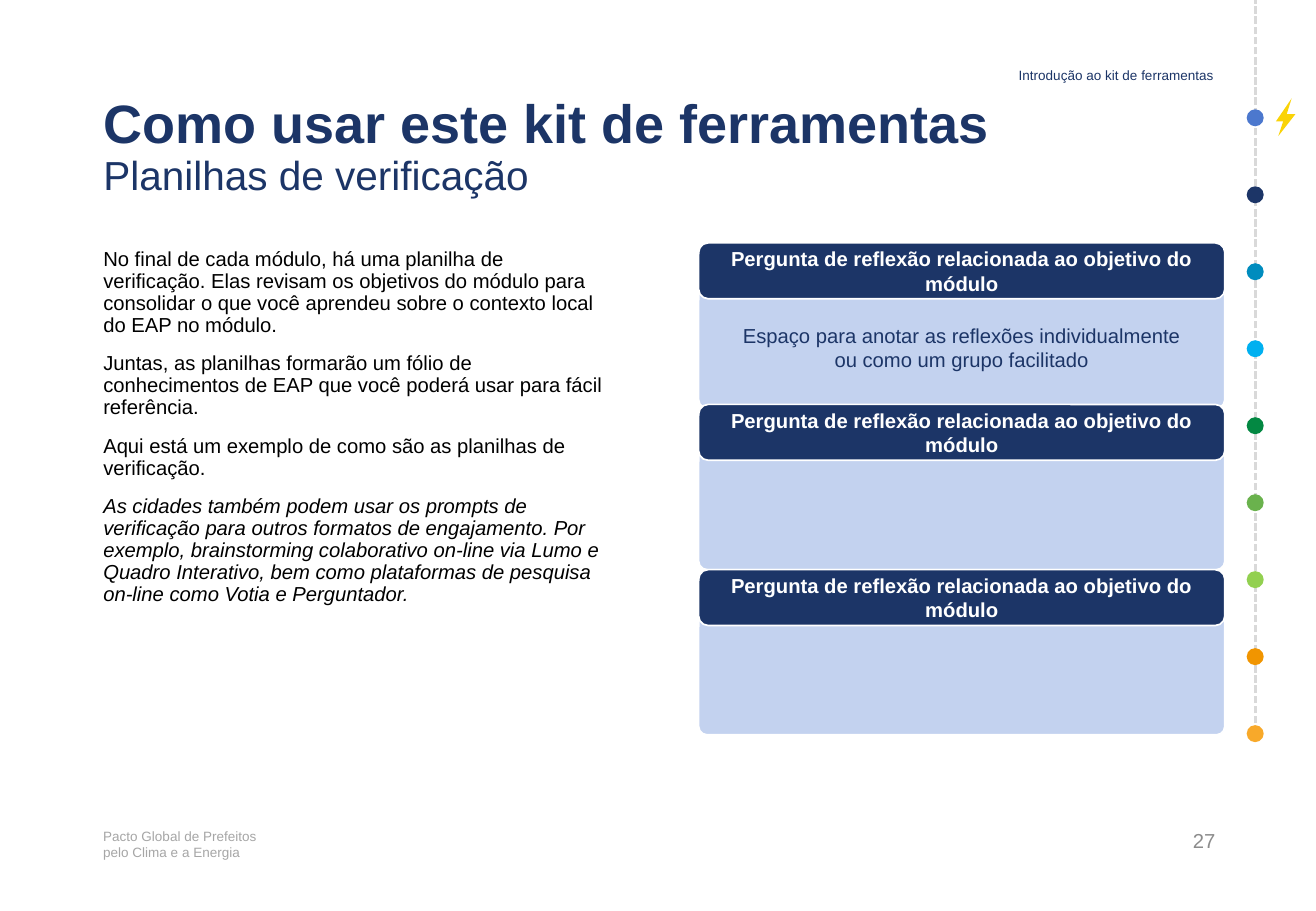
from lxml.etree import SubElement
from pptx import Presentation
from pptx.dml.color import RGBColor
from pptx.enum.dml import MSO_LINE
from pptx.enum.shapes import MSO_CONNECTOR, MSO_SHAPE
from pptx.enum.text import MSO_ANCHOR as ANCHOR, MSO_AUTO_SIZE, PP_ALIGN as ALIGN
from pptx.oxml.ns import qn
from pptx.util import Inches, Pt

NAVY = RGBColor(0x1C, 0x35, 0x67)
PALE_BLUE = RGBColor(0xC3, 0xD2, 0xEF)
WHITE = RGBColor(0xFF, 0xFF, 0xFF)
BLACK = RGBColor(0x00, 0x00, 0x00)
FOOTER_GREY = RGBColor(0xA6, 0xA6, 0xA6)
NUMBER_GREY = RGBColor(0x8C, 0x8C, 0x8C)
LINE_GREY = RGBColor(0xD9, 0xD9, 0xD9)
YELLOW = RGBColor(0xFA, 0xD3, 0x07)
BLUE = RGBColor(0x4C, 0x78, 0xCE)
TEAL = RGBColor(0x00, 0x8C, 0xBE)
SKY = RGBColor(0x00, 0xB0, 0xF0)
GREEN = RGBColor(0x03, 0x88, 0x42)
LEAF = RGBColor(0x6A, 0xB2, 0x4D)
LIME = RGBColor(0x92, 0xD0, 0x50)
ORANGE = RGBColor(0xF1, 0x95, 0x00)
AMBER = RGBColor(0xF8, 0xA9, 0x2A)
MODULE_COLORS = [BLUE, NAVY, TEAL, SKY, GREEN, LEAF, LIME, ORANGE, AMBER]

QUESTION = "Pergunta de reflexão relacionada ao objetivo do módulo"
CARDS = [
    (2, "Espaço para anotar as reflexões individualmente\nou como um grupo facilitado"),
    (3.33, ""),
    (4.69, ""),
]
BODY = [
    "No final de cada módulo, há uma planilha de verificação. Elas revisam os objetivos "
    "do módulo para consolidar o que você aprendeu sobre o contexto local do EAP no módulo.",
    "Juntas, as planilhas formarão um fólio de conhecimentos de EAP que você poderá usar "
    "para fácil referência.",
    "Aqui está um exemplo de como são as planilhas de verificação.",
]
BODY_NOTE = (
    "As cidades também podem usar os prompts de verificação para outros formatos de "
    "engajamento. Por exemplo, brainstorming colaborativo on-line via Lumo e Quadro "
    "Interativo, bem como plataformas de pesquisa on-line como Votia e Perguntador."
)
BOLT_PARTS = [
    [(0.07, 0.19), (0, 0.19), (0.13, 0), (0.08, 0.16)],
    [(0.08, 0.13), (0.16, 0.13), (0.02, 0.31), (0.07, 0.16)],
]


def write(p, text, size=12, color=BLACK, bold=False, italic=False):
    """Add text to a paragraph, with a line break at each newline."""
    for i, line in enumerate(text.split("\n")):
        if i:
            p.add_line_break()
        r = p.add_run()
        r.text = line
        r.font.name = "Arial"
        r.font.size = Pt(size)
        r.font.color.rgb = color
        r.font.bold = bold
        r.font.italic = italic


def place(sp, left, top, width, height):
    """Move a shape to a box given in inches."""
    sp.left, sp.top = Inches(left), Inches(top)
    sp.width, sp.height = Inches(width), Inches(height)


def set_frame(sp, anchor=ANCHOR.TOP):
    """Make the text frame wrap at a fixed size and return it."""
    tf = sp.text_frame
    tf.word_wrap = True
    tf.auto_size = MSO_AUTO_SIZE.NONE
    tf.vertical_anchor = anchor
    return tf


def format_paragraph(p, align=ALIGN.LEFT, before=0):
    """Set tight spacing on a placeholder paragraph and remove its bullet."""
    pPr = p._p.get_or_add_pPr()
    pPr.set("marL", "0")
    pPr.set("indent", "0")
    SubElement(pPr, qn("a:buNone"))
    p.alignment = align
    p.line_spacing = 0.9
    p.space_before = Pt(before)


def paint(sp, color, line=None):
    """Fill a shape and give it an outline or none."""
    sp.shadow.inherit = False
    sp.fill.solid()
    sp.fill.fore_color.rgb = color
    if line is None:
        sp.line.fill.background()
    else:
        sp.line.color.rgb = line
        sp.line.width = Pt(1)


def add_title(s, left, top, width, height):
    """Fill the title with its heading and subheading."""
    sp = s.shapes.title
    place(sp, left, top, width, height)
    p = set_frame(sp).paragraphs[0]
    format_paragraph(p)
    write(p, "Como usar este kit de ferramentas\n", size=32, color=NAVY, bold=True)
    write(p, "Planilhas de verificação", size=24, color=NAVY)


def add_body(s, left, top, width, height):
    """Fill the body with the explanatory paragraphs."""
    sp = s.placeholders[1]
    place(sp, left, top, width, height)
    tf = set_frame(sp)
    for i, text in enumerate(BODY + [BODY_NOTE]):
        p = tf.add_paragraph() if i else tf.paragraphs[0]
        format_paragraph(p, before=10 if i else 0)
        write(p, text, italic=text == BODY_NOTE)


def add_section_label(s, left, top, width, height):
    """Fill the small section name above the title."""
    sp = s.placeholders[2]
    place(sp, left, top, width, height)
    p = set_frame(sp, ANCHOR.BOTTOM).paragraphs[0]
    format_paragraph(p, align=ALIGN.RIGHT)
    write(p, "Introdução ao kit de ferramentas", size=8, color=NAVY)


def add_round_box(s, left, top, width, height, fill, text="", radius=0.17, **style):
    """Draw a rounded box with centred text."""
    sp = s.shapes.add_shape(MSO_SHAPE.ROUNDED_RECTANGLE, Inches(left), Inches(top),
                            Inches(width), Inches(height))
    sp.adjustments[0] = radius
    paint(sp, fill, line=WHITE)
    if text:
        p = set_frame(sp, ANCHOR.MIDDLE).paragraphs[0]
        p.alignment = ALIGN.CENTER
        write(p, text, **style)


def add_card(s, left, top, width, answer):
    """Draw an answer panel topped by its question bar."""
    add_round_box(s, left, top + 0.36, width, 1, PALE_BLUE, answer, radius=0.07, color=NAVY)
    add_round_box(s, left, top, width, 0.46, NAVY, QUESTION, color=WHITE, bold=True)


def add_timeline(s, left, top, width, height):
    """Draw the dashed line and its evenly spaced module dots."""
    x = Inches(left + width / 2)
    line = s.shapes.add_connector(MSO_CONNECTOR.STRAIGHT, x, Inches(top + height), x, 0)
    line.line.color.rgb = LINE_GREY
    line.line.width = Pt(1.5)
    line.line.dash_style = MSO_LINE.SQUARE_DOT
    SubElement(line._element.spPr, qn("a:effectLst"))
    pitch = (height - width / 2) / (len(MODULE_COLORS) - 1)
    for i, color in enumerate(MODULE_COLORS):
        dot = s.shapes.add_shape(MSO_SHAPE.OVAL, Inches(left), Inches(top + i * pitch),
                                 Inches(width), Inches(width))
        paint(dot, color)


def add_bolt(s, left, top):
    """Draw the lightning bolt from its two halves."""
    for part in BOLT_PARTS:
        points = [(Inches(left + x), Inches(top + y)) for x, y in part]
        builder = s.shapes.build_freeform(*points[0])
        builder.add_line_segments(points[1:], close=True)
        paint(builder.convert_to_shape(), YELLOW)


def add_note(s, left, top, width, height, text, align=ALIGN.LEFT, **style):
    """Add a footer text box."""
    sp = s.shapes.add_textbox(Inches(left), Inches(top), Inches(width), Inches(height))
    p = set_frame(sp).paragraphs[0]
    p.alignment = align
    write(p, text, **style)


def main():
    """Build and save the slide."""
    prs = Presentation()
    prs.slide_width, prs.slide_height = Inches(10.83), Inches(7.5)
    s = prs.slides.add_slide(prs.slide_layouts[3])
    add_title(s, 0.75, 0.75, 9.33, 1.08)
    add_body(s, 0.75, 2, 4.33, 4.17)
    add_section_label(s, 6.67, 0.5, 3.42, 0.24)
    for top, answer in CARDS:
        add_card(s, 5.75, top, 4.33, answer)
    add_timeline(s, 10.26, 0.9, 0.14, 5.14)
    add_bolt(s, 10.5, 0.81)
    add_note(s, 0.75, 6.77, 1.83, 0.4, "Pacto Global de Prefeitos\npelo Clima e a Energia",
             size=8, color=FOOTER_GREY)
    add_note(s, 9.58, 6.77, 0.52, 0.4, "27", align=ALIGN.RIGHT, color=NUMBER_GREY)
    prs.save("out.pptx")


if __name__ == "__main__":
    main()
